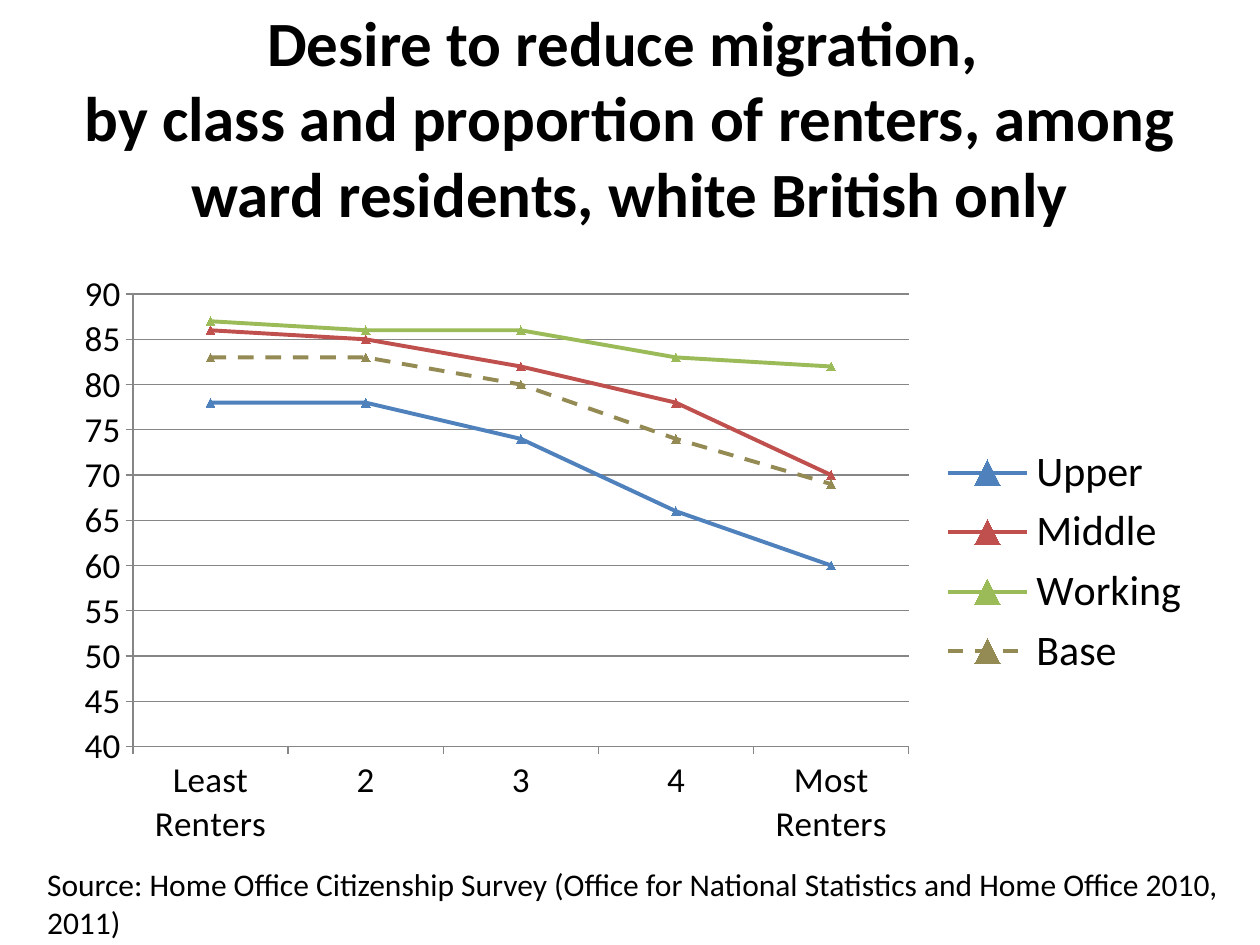
import pptx
import pptx.chart.data
import pptx.dml.color
import pptx.enum.chart
import pptx.enum.dml
import pptx.enum.text
import pptx.oxml
import pptx.oxml.ns
import pptx.util
from pptx.util import Cm, Pt

RGBColor = pptx.dml.color.RGBColor
BLACK = RGBColor(0x00, 0x00, 0x00)
GRID_GREY = RGBColor(0x86, 0x86, 0x86)
BLUE = RGBColor(0x4F, 0x81, 0xBD)
RED = RGBColor(0xC0, 0x50, 0x4D)
GREEN = RGBColor(0x9B, 0xBB, 0x59)
TAN = RGBColor(0x94, 0x8A, 0x54)
FONT = "Calibri"

TITLE = ("Desire to reduce migration, \v"
         "by class and proportion of renters, among ward residents, white British only")
SOURCE = ("Source: Home Office Citizenship Survey "
          "(Office for National Statistics and Home Office 2010, 2011)")
RENTER_GROUPS = ["Least Renters", "2", "3", "4", "Most Renters"]
CLASSES = [
    ("Upper", (78, 78, 74, 66, 60), BLUE),
    ("Middle", (86, 85, 82, 78, 70), RED),
    ("Working", (87, 86, 86, 83, 82), GREEN),
    ("Base", (83, 83, 80, 74, 69), TAN),
]


def style_font(font, size, bold=False):
    font.name = FONT
    font.size = Pt(size)
    font.bold = bold
    font.color.rgb = BLACK


def write_text(frame, text, size, bold=False, align=None, anchor=None):
    frame.word_wrap = True
    frame.vertical_anchor = anchor
    paragraph = frame.paragraphs[0]
    paragraph.text = text
    paragraph.alignment = align
    for run in paragraph.runs:
        style_font(run.font, size, bold)


def place_title(slide, left, top, width, height):
    title = slide.shapes.title
    title.left, title.top, title.width, title.height = left, top, width, height
    write_text(title.text_frame, TITLE, 36, bold=True,
               align=pptx.enum.text.PP_ALIGN.CENTER,
               anchor=pptx.enum.text.MSO_ANCHOR.MIDDLE)


def set_plot_layout(chart, x, y, w, h):
    """Fix the inner plot area, in fractions of the chart's box."""
    plot_area = chart.element.find(".//" + pptx.oxml.ns.qn("c:plotArea"))
    for old_layout in plot_area.findall(pptx.oxml.ns.qn("c:layout")):
        plot_area.remove(old_layout)
    plot_area.insert(0, pptx.oxml.parse_xml(
        f'<c:layout {pptx.oxml.ns.nsdecls("c")}><c:manualLayout>'
        '<c:layoutTarget val="inner"/><c:xMode val="edge"/><c:yMode val="edge"/>'
        f'<c:x val="{x}"/><c:y val="{y}"/><c:w val="{w}"/><c:h val="{h}"/>'
        '</c:manualLayout></c:layout>'))


def style_axis(axis):
    axis.major_tick_mark = pptx.enum.chart.XL_TICK_MARK.OUTSIDE
    axis.format.line.color.rgb = GRID_GREY
    style_font(axis.tick_labels.font, 20)


def style_class_line(series, color):
    series.smooth = False
    series.format.line.color.rgb = color
    series.format.line.width = Pt(2.25)
    series.marker.style = pptx.enum.chart.XL_MARKER_STYLE.TRIANGLE
    series.marker.size = 5
    series.marker.format.fill.solid()
    series.marker.format.fill.fore_color.rgb = color
    series.marker.format.line.color.rgb = color
    if series.name == "Base":
        series.format.line.dash_style = pptx.enum.dml.MSO_LINE.DASH


def place_migration_chart(slide, left, top, width, height):
    data = pptx.chart.data.CategoryChartData()
    data.categories = RENTER_GROUPS
    for name, shares, _ in CLASSES:
        data.add_series(name, shares)
    chart = slide.shapes.add_chart(pptx.enum.chart.XL_CHART_TYPE.LINE_MARKERS,
                                   left, top, width, height, data).chart
    chart.has_title = False
    style_font(chart.font, 10)
    chart.plots[0].vary_by_categories = False
    set_plot_layout(chart, 0.06, 0.05, 0.68, 0.76)

    style_axis(chart.category_axis)
    shares_axis = chart.value_axis
    style_axis(shares_axis)
    shares_axis.minimum_scale = 40
    shares_axis.maximum_scale = 90
    shares_axis.major_unit = 5
    shares_axis.has_major_gridlines = True
    shares_axis.major_gridlines.format.line.color.rgb = GRID_GREY

    chart.has_legend = True
    chart.legend.position = pptx.enum.chart.XL_LEGEND_POSITION.RIGHT
    chart.legend.include_in_layout = False
    style_font(chart.legend.font, 24)

    for series, (_, _, color) in zip(chart.plots[0].series, CLASSES):
        style_class_line(series, color)


def place_source(slide, left, top, width, height):
    source = slide.shapes.add_textbox(left, top, width, height)
    write_text(source.text_frame, SOURCE, 18)


def main():
    deck = pptx.Presentation()
    deck.slide_width, deck.slide_height = Cm(25.4), Cm(19.05)
    slide = deck.slides.add_slide(deck.slide_layouts.get_by_name("Title Only"))
    place_migration_chart(slide, Cm(1.3), Cm(5.33), Cm(23), Cm(12))
    place_title(slide, Cm(1.27), Cm(0.76), Cm(22.86), Cm(3.18))
    place_source(slide, Cm(0.7), Cm(17.32), Cm(24.2), Cm(2.57))
    deck.save("out.pptx")


if __name__ == "__main__":
    main()
